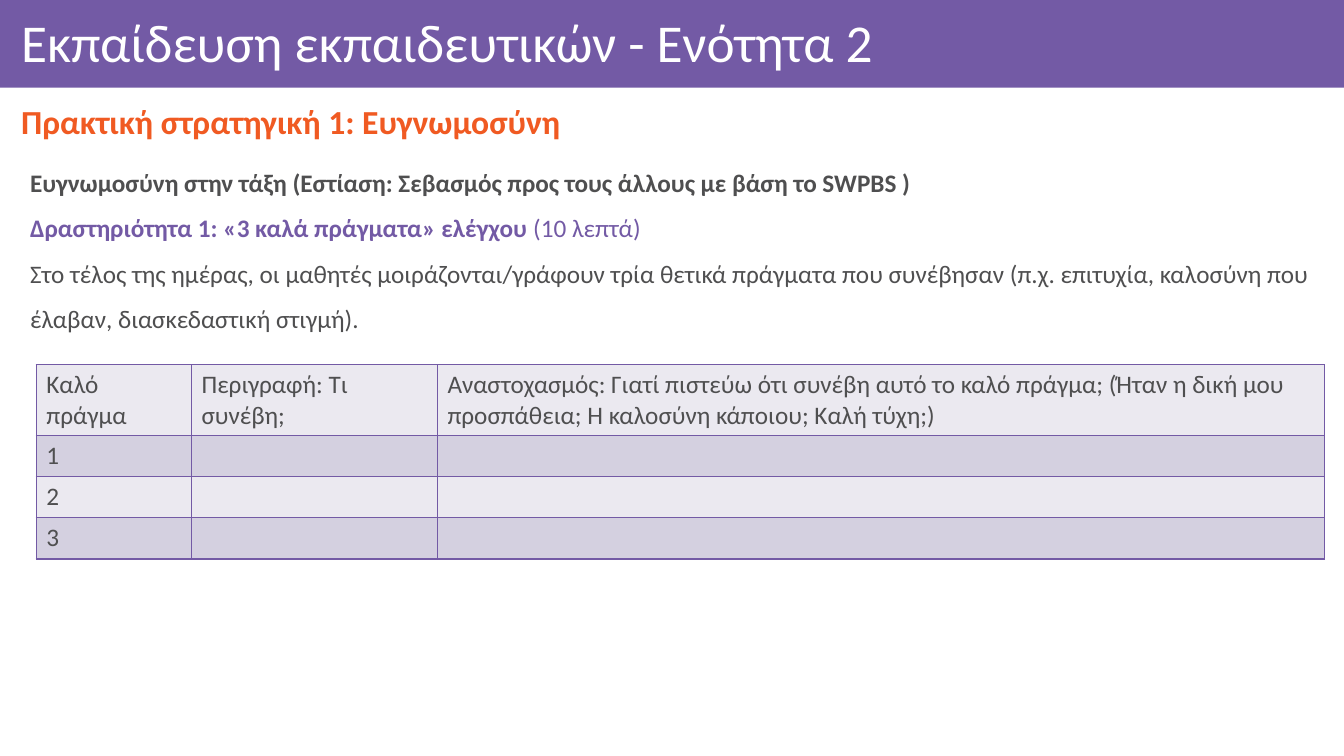
import pptx
import pptx.util
import pptx.dml.color
import pptx.enum.shapes
import pptx.enum.text
import pptx.oxml
import pptx.oxml.ns

PURPLE, ORANGE, GRAY, WHITE = "735AA5", "F05A22", "4F4F50", "FFFFFF"
BANDS = ("EBE9F0", "D4D0E0")


def color(value):
    return pptx.dml.color.RGBColor.from_string(value)


class SlideBuilder:
    font_name = "Calibri"

    def __init__(self, deck):
        self.width, self.height = deck.slide_width, deck.slide_height
        self.slide = deck.slides.add_slide(deck.slide_layouts[6])

    def across(self, percent):
        return round(self.width * percent / 100)

    def down(self, percent):
        return round(self.height * percent / 100)

    def area(self, left, top, width, height):
        return self.across(left), self.down(top), self.across(width), self.down(height)

    def style(self, para, size, ink, bold=None):
        para.font.name = self.font_name
        para.font.size = pptx.util.Pt(size)
        para.font.color.rgb = color(ink)
        para.font.bold = bold

    def bar(self, area, fill):
        shape = self.slide.shapes.add_shape(
            pptx.enum.shapes.MSO_SHAPE.RECTANGLE, *self.area(*area))
        shape.shadow.inherit = False
        shape.fill.solid()
        shape.fill.fore_color.rgb = color(fill)
        shape.line.fill.background()

    def text(self, area, paragraphs, size, spacing=1.0, middle=False, justify=False):
        box = self.slide.shapes.add_textbox(*self.area(*area))
        frame = box.text_frame
        frame.word_wrap = True
        if middle:
            frame.vertical_anchor = pptx.enum.text.MSO_ANCHOR.MIDDLE
        for index, (ink, spans) in enumerate(paragraphs):
            para = frame.add_paragraph() if index else frame.paragraphs[0]
            para.line_spacing = spacing
            if justify:
                para.alignment = pptx.enum.text.PP_ALIGN.JUSTIFY
            weights = {bold for _, bold in spans}
            self.style(para, size, ink, spans[0][1] if len(weights) == 1 else None)
            for words, bold in spans:
                span = para.add_run()
                span.text = words
                if len(weights) > 1:
                    span.font.bold = bold

    def border(self, cell, ink, points):
        properties = cell._tc.get_or_add_tcPr()
        for index, side in enumerate(("lnL", "lnR", "lnT", "lnB")):
            properties.insert(index, pptx.oxml.parse_xml(
                f'<a:{side} {pptx.oxml.ns.nsdecls("a")} w="{pptx.util.Pt(points)}">'
                f'<a:solidFill><a:srgbClr val="{ink}"/></a:solidFill></a:{side}>'))

    def table(self, left, top, columns, rows, contents, size):
        frame = self.slide.shapes.add_table(
            len(rows), len(columns), *self.area(left, top, sum(columns), sum(rows)))
        table = frame.table
        for column, width in zip(table.columns, columns):
            column.width = self.across(width)
        for row_index, (row, height) in enumerate(zip(table.rows, rows)):
            row.height = self.down(height)
            for cell, words in zip(row.cells, contents[row_index]):
                cell.text = words
                self.style(cell.text_frame.paragraphs[0], size, GRAY, False)
                cell.fill.solid()
                cell.fill.fore_color.rgb = color(BANDS[row_index % 2])
                self.border(cell, PURPLE, 1)


def main():
    deck = pptx.Presentation()
    deck.slide_width = pptx.util.Inches(13.33)
    deck.slide_height = pptx.util.Inches(7.5)
    page = SlideBuilder(deck)
    page.bar((0, 0, 100, 11.6), PURPLE)
    page.text((0.83, 12.4, 98, 8),
              [(ORANGE, [("Πρακτική στρατηγική 1: Ευγνωμοσύνη", True)])],
              24, spacing=0.9, middle=True, justify=True)
    page.text((0.83, 0.27, 98, 10.4),
              [(WHITE, [("Εκπαίδευση εκπαιδευτικών - Ενότητα 2", False)])],
              38, middle=True)
    page.text((1.5, 19.47, 97, 68), [
        (GRAY, [("Ευγνωμοσύνη στην τάξη (Εστίαση: Σεβασμός προς τους άλλους "
                 "με βάση το SWPBS )", True)]),
        (PURPLE, [("Δραστηριότητα 1: «3 καλά πράγματα» ελέγχου ", True),
                  ("(10 λεπτά)", False)]),
        (GRAY, [("Στο τέλος της ημέρας, οι μαθητές μοιράζονται/γράφουν τρία θετικά "
                 "πράγματα που συνέβησαν (π.χ. επιτυχία, καλοσύνη που έλαβαν, "
                 "διασκεδαστική στιγμή).", False)]),
    ], 18, spacing=1.5)
    headings = ("Καλό πράγμα", "Περιγραφή: Τι συνέβη;",
                "Αναστοχασμός: Γιατί πιστεύω ότι συνέβη αυτό το καλό πράγμα; "
                "(Ήταν η δική μου προσπάθεια; Η καλοσύνη κάποιου; Καλή τύχη;)")
    entries = [(str(number), "", "") for number in range(1, 4)]
    page.table(2.7, 48.27, (11.55, 18.3, 66), (9.33, 5.45, 5.45, 5.45),
               [headings, *entries], 18)
    deck.save("out.pptx")


if __name__ == "__main__":
    main()
